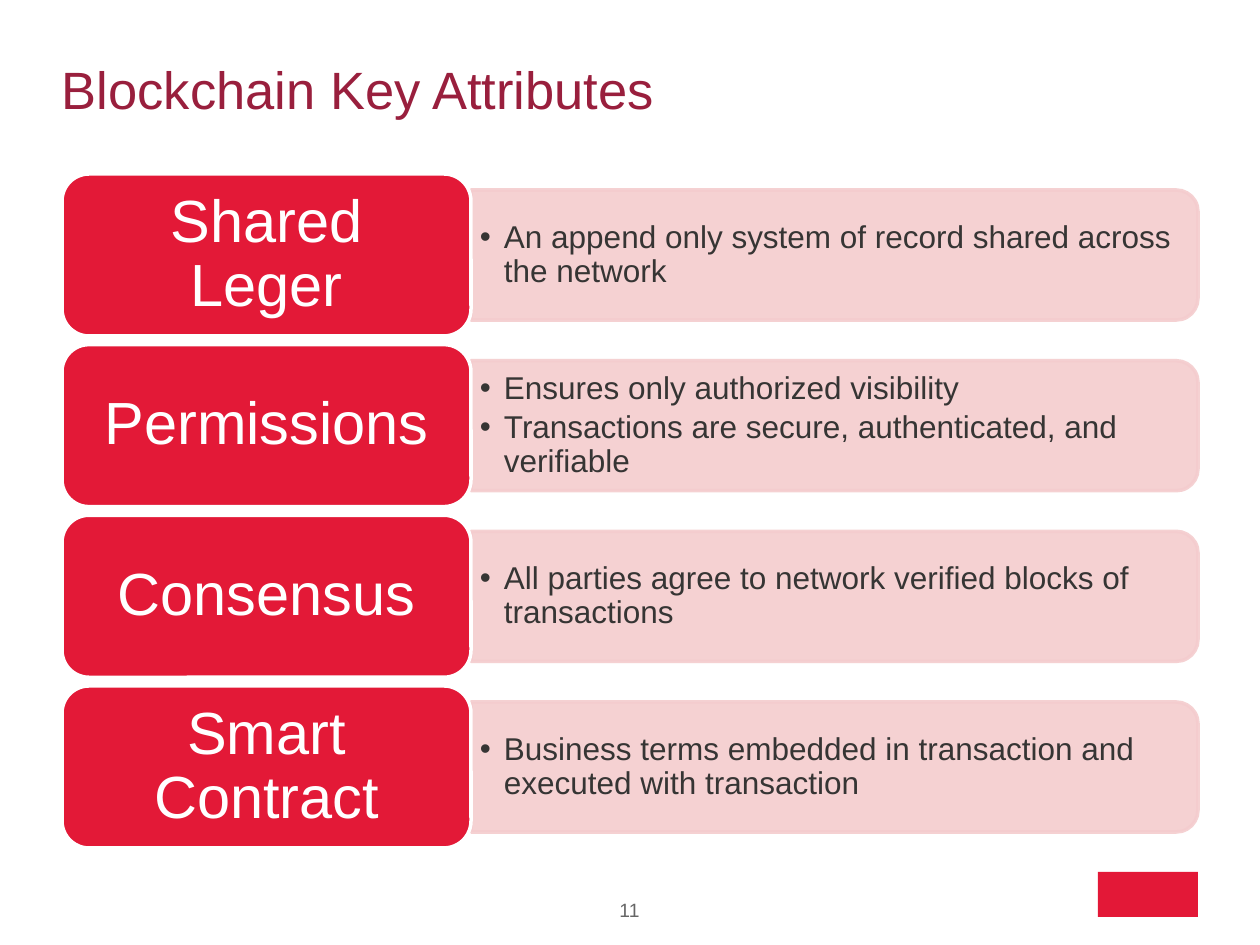
from lxml import etree
from pptx import Presentation
from pptx.dml.color import RGBColor
from pptx.enum.shapes import MSO_SHAPE
from pptx.enum.text import MSO_ANCHOR, PP_ALIGN
from pptx.oxml.ns import qn
from pptx.util import Emu, Pt

ROUNDED = MSO_SHAPE.ROUNDED_RECTANGLE
TOP_ROUNDED = MSO_SHAPE.ROUND_2_SAME_RECTANGLE
RECTANGLE = MSO_SHAPE.RECTANGLE
LEFT, CENTER = PP_ALIGN.LEFT, PP_ALIGN.CENTER
TOP, MIDDLE = MSO_ANCHOR.TOP, MSO_ANCHOR.MIDDLE

RED, PINK, WHITE = "E31937", "F4CCCE", "FFFFFF"
ATTRIBUTES = [
    ("Shared Leger", ["An append only system of record shared across the network"]),
    ("Permissions", ["Ensures only authorized visibility",
                     "Transactions are secure, authenticated, and verifiable"]),
    ("Consensus", ["All parties agree to network verified blocks of transactions"]),
    ("Smart Contract", ["Business terms embedded in transaction and executed with transaction"]),
]


def px(length):
    """Turn pixels into EMU."""
    return Emu(round(length * 914400 / 126))


def color(value):
    """Turn a hex string into a colour."""
    return RGBColor.from_string(value)


def add_bullet(para, indent):
    """Give a paragraph a hanging round bullet."""
    properties = para._p.get_or_add_pPr()
    properties.set("marL", str(px(indent)))
    properties.set("indent", str(-px(indent)))
    etree.SubElement(properties, qn("a:buFont")).set("typeface", "Arial")
    etree.SubElement(properties, qn("a:buChar")).set("char", "•")


def write(shape, lines, size, ink, align=LEFT, anchor=MIDDLE, insets=(0, 0),
          spacing=1.0, gap=0, indent=0, wrap=True):
    """Write formatted paragraphs into a shape."""
    frame = shape.text_frame
    frame.word_wrap = wrap
    frame.vertical_anchor = anchor
    frame.margin_left = frame.margin_right = px(insets[0])
    frame.margin_top = frame.margin_bottom = px(insets[1])
    for index, line in enumerate(lines):
        para = frame.add_paragraph() if index else frame.paragraphs[0]
        if indent:
            add_bullet(para, indent)
        para.alignment = align
        para.line_spacing = spacing
        if index and gap:
            para.space_before = Pt(gap)
        span = para.add_run()
        span.text = line
        span.font.name = "Arial"
        span.font.size = Pt(size)
        span.font.color.rgb = color(ink)


def add_text(page, box, lines, size, ink, **style):
    """Add a text box with formatted text."""
    shape = page.shapes.add_textbox(*map(px, box))
    write(shape, lines, size, ink, **style)


def add_block(page, kind, box, fill, line=None, opacity=100):
    """Add a filled shape with an optional outline."""
    shape = page.shapes.add_shape(kind, *map(px, box))
    shape.shadow.inherit = False
    shape.fill.solid()
    shape.fill.fore_color.rgb = color(fill)
    if line:
        shape.line.color.rgb = color(line)
        shape.line.width = Pt(2)
    else:
        shape.line.fill.background()
    if opacity < 100:
        for tint in shape._element.spPr.iter(qn("a:srgbClr")):
            etree.SubElement(tint, qn("a:alpha")).set("val", str(opacity * 1000))
    return shape


def add_attribute(page, box, name, points):
    """Place one attribute: a red label and a pink panel of points."""
    left, top, width, height = box
    label_width, panel_height, text_height = 409, 130, 117
    panel_left, panel_width = left + label_width, width - label_width
    middle = top + height / 2
    center = panel_left + panel_width / 2
    turned = (center - panel_height / 2, middle - panel_width / 2, panel_height, panel_width)
    panel = add_block(page, TOP_ROUNDED, turned, PINK, PINK, opacity=90)
    panel.rotation = 90
    add_text(page, (panel_left, middle - text_height / 2, panel_width - 6, text_height),
             points, 18, "363534", insets=(9, 5), spacing=0.9, gap=3, indent=24)
    label = add_block(page, ROUNDED, (left, top, label_width, height), RED, WHITE)
    write(label, [name], 34, WHITE, align=CENTER, insets=(17, 9), spacing=0.9)


def add_attributes(page, box, attributes):
    """Spread the attributes evenly down the box."""
    left, top, width, height = box
    row_height = 162
    pitch = (height - row_height) / (len(attributes) - 1)
    for index, (name, points) in enumerate(attributes):
        add_attribute(page, (left, top + index * pitch, width, row_height), name, points)


def add_footer(page, box, number):
    """Place the page number and the red mark at the right edge."""
    left, top, width, height = box
    add_block(page, RECTANGLE, (left + width - 100, top, 100, 45), "E31837")
    add_text(page, (left + 514, top + 26, 107, 33), [number], 11, "666666",
             align=CENTER, anchor=TOP, wrap=False)


def main():
    """Build the slide and save it."""
    deck = Presentation()
    deck.slide_width, deck.slide_height = px(1260), px(945)
    page = deck.slides.add_slide(deck.slide_layouts[6])
    add_text(page, (62, 25, 1135, 127), ["Blockchain Key Attributes"], 30, "991F3D")
    add_attributes(page, (62, 174, 1136, 674), ATTRIBUTES)
    add_footer(page, (62, 872, 1136, 60), "11")
    deck.save("out.pptx")


if __name__ == "__main__":
    main()
